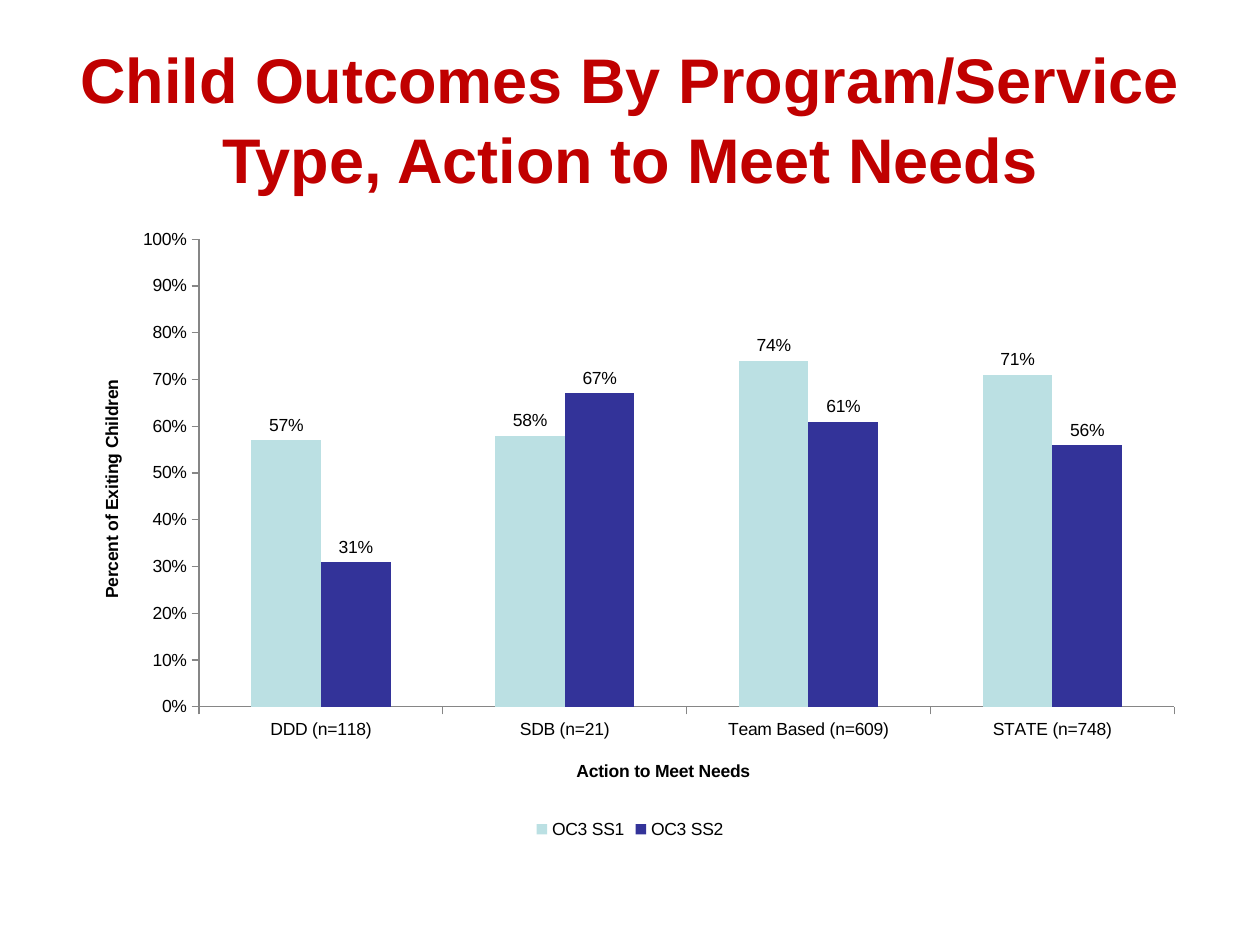
from lxml.etree import SubElement
from pptx import Presentation
from pptx.chart.data import CategoryChartData
from pptx.dml.color import RGBColor
from pptx.enum.chart import XL_CHART_TYPE, XL_LABEL_POSITION, XL_LEGEND_POSITION, XL_TICK_MARK
from pptx.enum.text import MSO_ANCHOR, PP_ALIGN
from pptx.oxml.ns import qn
from pptx.util import Pt

THEME = {
    "font": "Arial",
    "title_size": Pt(36),
    "chart_size": Pt(10),
    "title": RGBColor(0xC0, 0x00, 0x00),
    "text": RGBColor(0x00, 0x00, 0x00),
    "axis": RGBColor(0x86, 0x86, 0x86),
    "series": [RGBColor(0xBB, 0xE0, 0xE3), RGBColor(0x33, 0x33, 0x99)],
}


def place(parent, before, **fractions):
    """Fix a chart part at fractions of the chart area, in schema order."""
    for old in parent.findall(qn("c:layout")):
        parent.remove(old)
    layout = SubElement(parent, qn("c:layout"))
    manual = SubElement(layout, qn("c:manualLayout"))
    if "w" in fractions:
        SubElement(manual, qn("c:layoutTarget")).set("val", "inner")
    for side in "xy":
        SubElement(manual, qn(f"c:{side}Mode")).set("val", "edge")
    for key, value in fractions.items():
        SubElement(manual, qn(f"c:{key}")).set("val", str(value))
    parent.find(qn(before)).addprevious(layout)


deck = Presentation()
deck.slide_width, deck.slide_height = Pt(720), Pt(540)
slide = deck.slides.add_slide(deck.slide_layouts[5])

# Title
heading = slide.shapes.title
heading.left, heading.top, heading.width, heading.height = Pt(36), Pt(21.6), Pt(648), Pt(90)
heading.text_frame.text = "Child Outcomes By Program/Service Type, Action to Meet Needs"
heading.text_frame.vertical_anchor = MSO_ANCHOR.MIDDLE
heading_line = heading.text_frame.paragraphs[0]
heading_line.alignment = PP_ALIGN.CENTER
heading_line.line_spacing = 1.05
heading_font = heading_line.runs[0].font
heading_font.name, heading_font.size, heading_font.bold = THEME["font"], THEME["title_size"], True
heading_font.color.rgb = THEME["title"]

# Outcomes by program
outcomes = CategoryChartData(number_format="0%")
outcomes.categories = ["DDD (n=118)", "SDB (n=21)", "Team Based (n=609)", "STATE (n=748)"]
outcomes.add_series("OC3 SS1", [0.57, 0.58, 0.74, 0.71])
outcomes.add_series("OC3 SS2", [0.31, 0.67, 0.61, 0.56])
chart = slide.shapes.add_chart(
    XL_CHART_TYPE.COLUMN_CLUSTERED, Pt(36), Pt(126), Pt(648), Pt(356.4), outcomes
).chart
chart.has_title = False
chart.font.name, chart.font.size = THEME["font"], THEME["chart_size"]
chart.font.color.rgb = THEME["text"]
chart.has_legend = True
chart.legend.position = XL_LEGEND_POSITION.BOTTOM
chart.legend.include_in_layout = False

columns = chart.plots[0]
columns.gap_width, columns.overlap = 150, 0
columns.vary_by_categories = False
for series, color in zip(columns.series, THEME["series"]):
    series.format.fill.solid()
    series.format.fill.fore_color.rgb = color
    labels = series.data_labels
    labels.show_value = True
    labels.number_format, labels.number_format_is_linked = "0%", False
    labels.position = XL_LABEL_POSITION.OUTSIDE_END

# Axes
programs, percent = chart.category_axis, chart.value_axis
percent.minimum_scale, percent.maximum_scale, percent.major_unit = 0, 1, 0.1
percent.tick_labels.number_format = "0%"
percent.tick_labels.number_format_is_linked = False
for axis, name, x, y in [
    (programs, "Action to Meet Needs", 0.45, 0.86),
    (percent, "Percent of Exiting Children", 0.03, 0.25),
]:
    axis.has_major_gridlines = False
    axis.major_tick_mark, axis.minor_tick_mark = XL_TICK_MARK.OUTSIDE, XL_TICK_MARK.NONE
    axis.format.line.color.rgb = THEME["axis"]
    axis.format.line.width = Pt(0.75)
    axis_title = axis.axis_title
    axis_title.text_frame.text = name
    title_font = axis_title.text_frame.paragraphs[0].runs[0].font
    title_font.name, title_font.size, title_font.bold = THEME["font"], THEME["chart_size"], True
    title_font.color.rgb = THEME["text"]
    place(axis_title._element, "c:overlay", x=x, y=y)

plot_area = chart._chartSpace.chart.plotArea
place(plot_area, "c:barChart", x=0.12, y=0.03, w=0.86, h=0.75)

deck.save("out.pptx")
